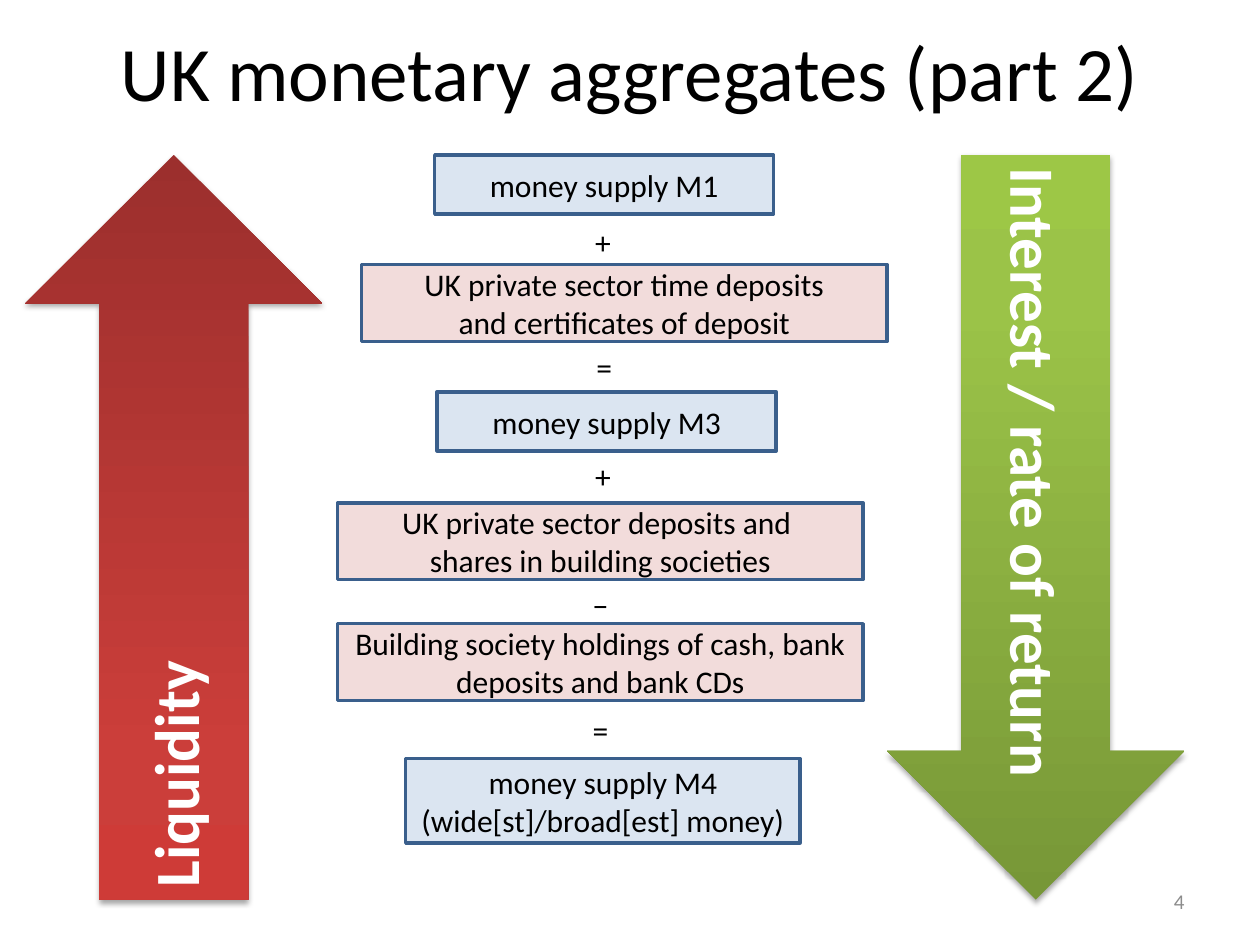
from dataclasses import dataclass

from lxml import etree
from pptx import Presentation
from pptx.dml.color import RGBColor
from pptx.enum.shapes import MSO_SHAPE
from pptx.enum.text import MSO_ANCHOR, PP_ALIGN
from pptx.oxml import parse_xml
from pptx.oxml.ns import nsdecls, qn
from pptx.util import Inches, Pt

RECTANGLE, DOWN_ARROW = MSO_SHAPE.RECTANGLE, MSO_SHAPE.DOWN_ARROW
CENTER, RIGHT = PP_ALIGN.CENTER, PP_ALIGN.RIGHT
TOP, MIDDLE = MSO_ANCHOR.TOP, MSO_ANCHOR.MIDDLE


@dataclass(frozen=True)
class Theme:
    font: str = "Calibri"
    title_size: int = 44
    arrow_size: int = 36
    body_size: int = 18
    number_size: int = 12
    black: str = "000000"
    white: str = "FFFFFF"
    gray: str = "8C8C8C"
    blue: str = "4F81BD"
    red: str = "C0504D"
    outline: str = "3A5F8C"
    red_gradient: tuple = ("9C2F2D", "CB3E3A", "CE3B37")
    green_gradient: tuple = ("779737", "9BC348", "9DC746")


THEME = Theme()


def write_text(shape, lines, size, color=THEME.black, align=CENTER, anchor=MIDDLE, bold=False):
    """Fill the shape with one paragraph per line."""
    frame = shape.text_frame
    frame.word_wrap = True
    frame.vertical_anchor = anchor
    for index, line in enumerate(lines):
        paragraph = frame.add_paragraph() if index else frame.paragraphs[0]
        paragraph.alignment = align
        run = paragraph.add_run()
        run.text = line
        for name, value in {"name": THEME.font, "size": Pt(size), "bold": bold}.items():
            setattr(run.font, name, value)
        run.font.color.rgb = RGBColor.from_string(color)


presentation = Presentation()
presentation.slide_width, presentation.slide_height = Inches(10), Inches(7.5)
slide = presentation.slides.add_slide(presentation.slide_layouts[6])
shapes = slide.shapes

# Title and slide number
title = shapes.add_textbox(Inches(0.5), Inches(-0.19), Inches(9), Inches(1.5))
write_text(title, ["UK monetary aggregates (part 2)"], THEME.title_size)
number = shapes.add_textbox(Inches(7.17), Inches(6.95), Inches(2.33), Inches(0.4))
write_text(number, ["4"], THEME.number_size, THEME.gray, RIGHT)

# Operators between the aggregates
operators = [
    ("+", 3.21, 1.72),
    ("=", 3.22, 2.71),
    ("+", 3.21, 3.58),
    ("−", 3.19, 4.6),
    ("=", 3.19, 5.59),
]
for symbol, left, top in operators:
    operator = shapes.add_textbox(Inches(left), Inches(top), Inches(3.15), Inches(0.4))
    write_text(operator, [symbol], THEME.body_size, anchor=TOP)

# Aggregates (blue) and their components (red)
SUPPLY = (2.69, 0.47, THEME.blue)
WIDE_SUPPLY = (3.13, 0.67, THEME.blue)
COMPONENT = (4.17, 0.61, THEME.red)
boxes = [
    (3.45, 1.23, SUPPLY, ["money supply M1"]),
    (2.87, 2.1, COMPONENT, ["UK private sector time deposits", "and certificates of deposit"]),
    (3.47, 3.11, SUPPLY, ["money supply M3"]),
    (2.68, 3.99, COMPONENT, ["UK private sector deposits and ", "shares in building societies"]),
    (2.68, 4.95, COMPONENT, ["Building society holdings of cash, bank deposits and bank CDs"]),
    (3.22, 6.02, WIDE_SUPPLY, ["money supply M4", "(wide[st]/broad[est] money)"]),
]
for left, top, (width, height, color), lines in boxes:
    box = shapes.add_shape(RECTANGLE, Inches(left), Inches(top), Inches(width), Inches(height))
    box.shadow.inherit = False
    box.fill.solid()
    box.fill.fore_color.rgb = RGBColor.from_string(color)
    tint = box.fill._xPr.find(qn("a:solidFill"))[0]
    etree.SubElement(tint, qn("a:alpha")).set("val", "20000")
    box.line.color.rgb = RGBColor.from_string(THEME.outline)
    box.line.width = Pt(2)
    write_text(box, lines, THEME.body_size)

# Side arrows with gradient, soft shadow and vertical text
arrows = [
    ("Liquidity", 0.2, THEME.red_gradient, True),
    ("Interest / rate of return", 7.04, THEME.green_gradient, False),
]
for label, left, gradient, points_up in arrows:
    arrow = shapes.add_shape(DOWN_ARROW, Inches(left), Inches(1.23), Inches(2.36), Inches(5.91))
    arrow.line.fill.background()
    properties = arrow._element.spPr
    if points_up:
        properties.find(qn("a:xfrm")).set("flipV", "1")
    stops = "".join(
        f'<a:gs pos="{position}"><a:srgbClr val="{color}"/></a:gs>'
        for position, color in zip((0, 80000, 100000), gradient)
    )
    properties.find(qn("a:prstGeom")).addnext(parse_xml(
        f'<a:gradFill {nsdecls("a")} rotWithShape="1"><a:gsLst>{stops}</a:gsLst>'
        '<a:lin ang="16200000" scaled="0"/></a:gradFill>'
    ))
    properties.append(parse_xml(
        f'<a:effectLst {nsdecls("a")}><a:outerShdw blurRad="{Pt(3.1)}" dist="{Pt(1.8)}" '
        f'dir="5400000" rotWithShape="0"><a:srgbClr val="{THEME.black}">'
        '<a:alpha val="35000"/></a:srgbClr></a:outerShdw></a:effectLst>'
    ))
    write_text(arrow, [label], THEME.arrow_size, THEME.white, bold=True)
    arrow.text_frame._txBody.bodyPr.set("vert", "eaVert")

presentation.save("out.pptx")
